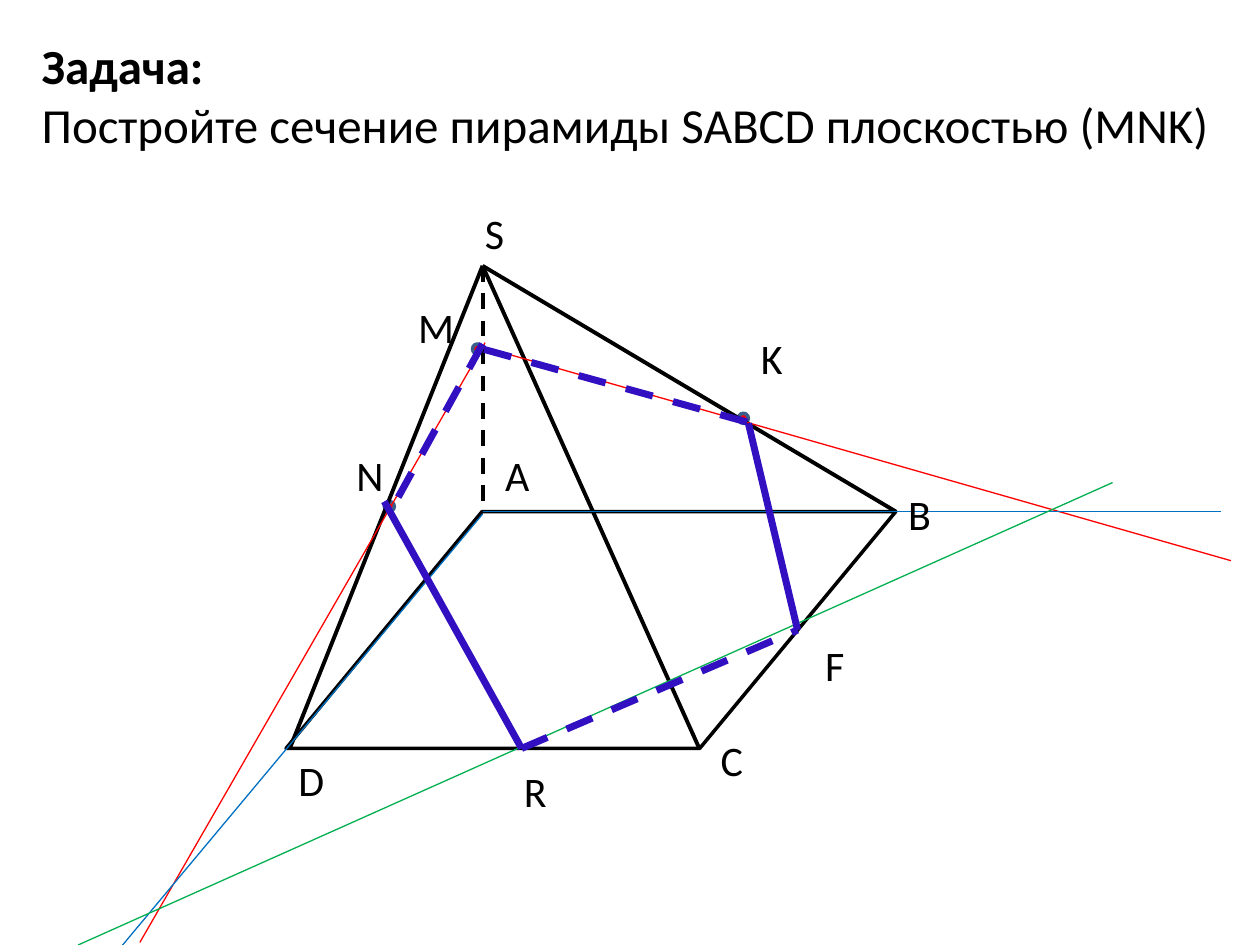
from lxml import etree
from pptx import Presentation
from pptx import util as u
from pptx.dml.color import RGBColor
from pptx.enum import dml, shapes, text
from pptx.oxml.ns import qn

COLORS = {
    "black": "000000", "red": "FF0000", "blue": "0070C0",
    "green": "00B050", "violet": "3210C2", "dot_rim": "3A5F8C",
}
FONT = "Calibri"


def color(name):
    return RGBColor.from_string(COLORS[name])


def set_font(span, size, bold=False):
    for key, value in {"name": FONT, "size": u.Pt(size), "bold": bold}.items():
        setattr(span.font, key, value)
    span.font.color.rgb = color("black")


deck = Presentation()
deck.slide_width, deck.slide_height = u.Inches(10), u.Inches(7.5)
page = deck.slides.add_slide(deck.slide_layouts[5])

# Title: the task
title = page.shapes.title
title_place = {"left": 0.23, "top": 0.23, "width": 9.64, "height": 1.51}
for key, value in title_place.items():
    setattr(title, key, u.Inches(value))
frame = title.text_frame
frame_format = {
    "word_wrap": True,
    "auto_size": text.MSO_AUTO_SIZE.NONE,
    "vertical_anchor": text.MSO_ANCHOR.TOP,
}
for key, value in frame_format.items():
    setattr(frame, key, value)
task = [("Задача:", True), ("Постройте сечение пирамиды SАВСD плоскостью (MNK)", False)]
for index, (words, bold) in enumerate(task):
    para = frame.paragraphs[0] if index == 0 else frame.add_paragraph()
    para.alignment = text.PP_ALIGN.LEFT
    span = para.add_run()
    span.text = words
    set_font(span, 28, bold)

# Base of the pyramid, its slant set so that the upper left corner is A
base = page.shapes.add_shape(
    shapes.MSO_SHAPE.PARALLELOGRAM,
    u.Inches(2.27), u.Inches(4.06), u.Inches(4.84), u.Inches(1.88))
base.adjustments[0] = 0.828
base.shadow.inherit = False
base.fill.background()
base.line.color.rgb = color("black")
base.line.width = u.Pt(2)

# Points M, N and K
DOT = 0.08
for left, top in [(3.05, 3.98), (5.86, 3.28), (3.75, 2.73)]:
    dot = page.shapes.add_shape(
        shapes.MSO_SHAPE.OVAL, u.Inches(left), u.Inches(top), u.Inches(DOT), u.Inches(DOT))
    dot.shadow.inherit = False
    dot.fill.solid()
    dot.fill.fore_color.rgb = color("red")
    dot.line.color.rgb = color("dot_rim")
    dot.line.width = u.Pt(2)

# Lines: (color, width, [(start, end, dashed)])
apex = (3.83, 2.11)
line_groups = [
    ("black", 2.25, [  # side edges
        (apex, (5.55, 5.94), False),
        (apex, (7.11, 4.06), False),
        (apex, (2.3, 5.94), False),
        (apex, (3.83, 4.06), True),
    ]),
    ("red", 0.75, [  # MK and MN extended
        ((3.82, 2.75), (9.77, 4.45), False),
        ((3.85, 2.72), (1.11, 7.48), False),
    ]),
    ("blue", 0.75, [  # AB and AD extended
        ((3.83, 4.06), (9.69, 4.06), False),
        ((3.83, 4.08), (0.84, 7.66), False),
    ]),
    ("green", 0.75, [((0.62, 7.5), (8.83, 3.83), False)]),  # trace on the base
    ("violet", 4, [  # section
        ((6.33, 5), (5.94, 3.36), False),
        ((5.93, 3.35), (3.83, 2.77), True),
        ((3.83, 2.73), (3.12, 4.02), True),
        ((3.05, 3.98), (4.14, 5.94), False),
        ((4.14, 5.94), (6.33, 5), True),
    ]),
]
for line_color, width, segments in line_groups:
    for start, end, dashed in segments:
        segment = page.shapes.add_connector(
            shapes.MSO_CONNECTOR.STRAIGHT, *[u.Inches(value) for value in start + end])
        segment.line.color.rgb = color(line_color)
        segment.line.width = u.Pt(width)
        if dashed:
            segment.line.dash_style = dml.MSO_LINE.DASH
        etree.SubElement(segment._element.spPr, qn("a:effectLst"))

# Letters of the vertices and points
labels = {
    "S": (3.75, 1.6), "А": (3.91, 3.52), "В": (7.11, 3.83), "D": (2.27, 5.94),
    "С": (5.62, 5.78), "N": (2.73, 3.52), "M": (3.22, 2.34), "F": (6.45, 5.03),
    "K": (5.94, 2.59), "R": (4.06, 6.03),
}
for letter, (left, top) in labels.items():
    box = page.shapes.add_textbox(
        u.Inches(left), u.Inches(top), u.Inches(0.31), u.Inches(0.51))
    box.text_frame.word_wrap = True
    span = box.text_frame.paragraphs[0].add_run()
    span.text = letter
    set_font(span, 24)

deck.save("out.pptx")
